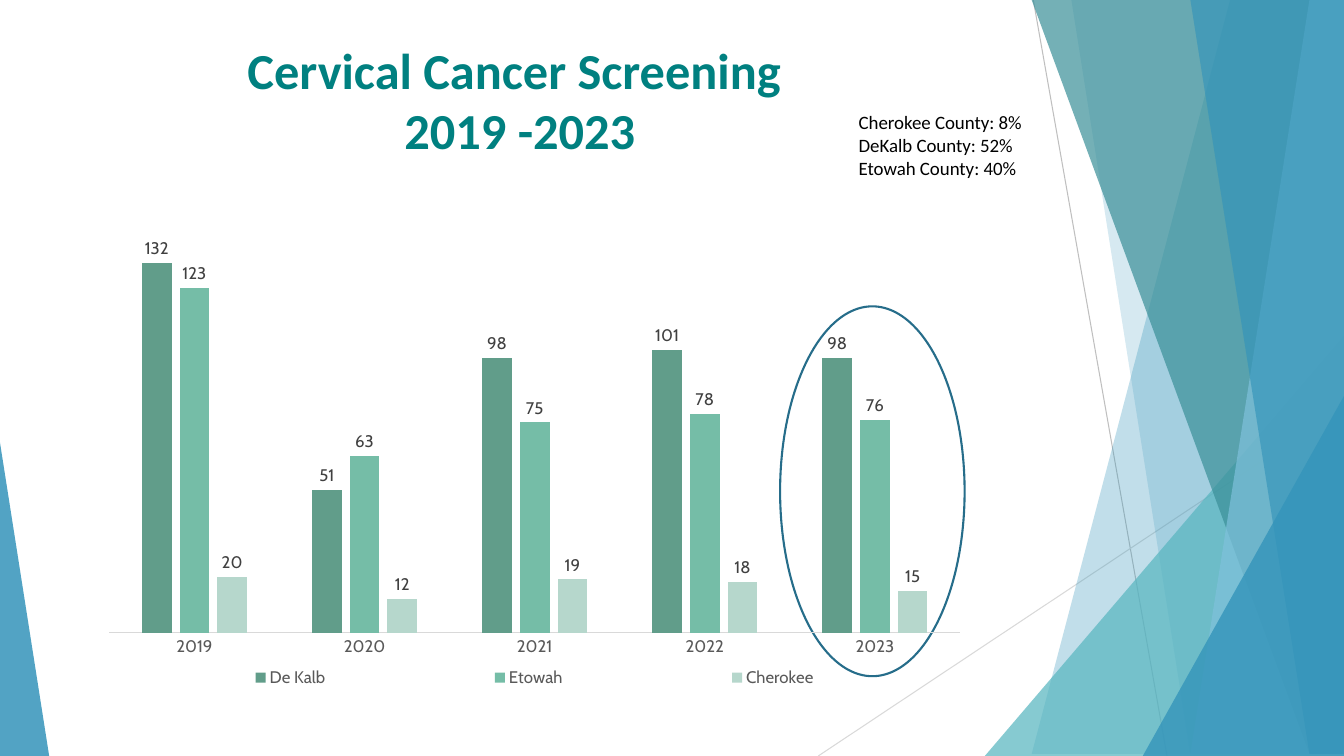
from lxml import etree
from pptx import Presentation
from pptx.chart.data import CategoryChartData
from pptx.dml.color import RGBColor
from pptx.enum.chart import XL_CHART_TYPE, XL_LABEL_POSITION, XL_LEGEND_POSITION, XL_TICK_MARK
from pptx.enum.shapes import MSO_CONNECTOR, MSO_SHAPE
from pptx.enum.text import MSO_ANCHOR, PP_ALIGN
from pptx.oxml import parse_xml
from pptx.oxml.ns import nsdecls, qn
from pptx.util import Cm, Pt

STRAIGHT = MSO_CONNECTOR.STRAIGHT
TRIANGLE = MSO_SHAPE.RIGHT_TRIANGLE.ISOSCELES_TRIANGLE
OVAL = MSO_SHAPE.OVAL
COLUMNS = XL_CHART_TYPE.COLUMN_CLUSTERED
OUTSIDE = XL_LABEL_POSITION.OUTSIDE_END
BOTTOM = XL_LEGEND_POSITION.BOTTOM
NO_TICK = XL_TICK_MARK.NONE

COLORS = {
    "blue": "3494BA", "aqua": "58B6C0", "teal": "3A8F98", "sky": "7FC1DB",
    "title": "008080", "oval": "266D8A", "black": "000000",
    "grey": "BFBFBF", "pale": "D9D9D9", "axis text": "595959", "label": "404040",
    "De Kalb": "619D8A", "Etowah": "75BDA7", "Cherokee": "B6D7CC",
}
RGB = {name: RGBColor.from_string(value) for name, value in COLORS.items()}
W, H, TOP = 33.87, 19.05, -0.02


def fill_facet(sp, color, alpha):
    """Give a background facet a see-through fill and no outline; alpha is in percent."""
    sp.shadow.inherit = False
    sp.fill.solid()
    sp.fill.fore_color.rgb = RGB[color]
    clr = sp.fill._xPr.find(qn("a:solidFill"))[0]
    etree.SubElement(clr, qn("a:alpha"), val=str(alpha * 1000))
    sp.line.fill.background()


def set_font(font, name, size, color):
    font.name, font.size = name, Pt(size)
    font.color.rgb = RGB[color]


prs = Presentation()
prs.slide_width, prs.slide_height = Cm(W), Cm(H)
s = prs.slides.add_slide(prs.slide_layouts[6])

# Background lines
for x1, y1, x2, y2, color in [(26.04, 0, 29.41, H, "grey"), (W, 10.24, 20.62, H, "pale")]:
    line = s.shapes.add_connector(STRAIGHT, Cm(x1), Cm(y1), Cm(x2), Cm(y2))
    line.line.color.rgb = RGB[color]
    line.line.width = Pt(0.75)
    etree.SubElement(line._element.spPr, qn("a:effectLst"))

# Background facets: bands run from the top edge to the bottom along the right side
facets = [
    ("band", 31.19, 25.5, "blue", 30),
    ("band", 26.67, 30.05, "blue", 20),
    ("triangle", 24.82, 8.46, 9.05, 1, "aqua", 72),
    ("band", 25.93, 32.79, "teal", 70),
    ("band", 33.1, 30.28, "sky", 70),
    ("band", 30.38, 33.48, "blue", 65),
    ("triangle", 28.8, 9.98, 5.07, 1, "blue", 80),
    ("triangle", 0, 11.15, 1.24, 0, "blue", 85),
]
for kind, *geometry, color, alpha in facets:
    if kind == "band":
        top_x, bottom_x = geometry
        fb = s.shapes.build_freeform(top_x, TOP, scale=Cm(1))
        fb.add_line_segments([(W, TOP), (W, H), (bottom_x, H)], close=True)
        sp = fb.convert_to_shape()
    else:
        x, y, width, apex = geometry
        sp = s.shapes.add_shape(TRIANGLE, Cm(x), Cm(y), Cm(width), Cm(H - y))
        sp.adjustments[0] = apex
    fill_facet(sp, color, alpha)

# Title
tf = s.shapes.add_textbox(Cm(0), Cm(0.76), Cm(26.21), Cm(3.48)).text_frame
tf.word_wrap = True
tf.vertical_anchor = MSO_ANCHOR.MIDDLE
p = tf.paragraphs[0]
p.alignment = PP_ALIGN.CENTER
p.add_run().text = "Cervical Cancer Screening "
p.add_line_break()
p.add_run().text = "2019 -2023"
set_font(p.font, "Calibri", 36, "title")
p.font.bold = True

# Oval around the latest year
oval = s.shapes.add_shape(OVAL, Cm(19.66), Cm(7.72), Cm(4.65), Cm(9.32))
oval.shadow.inherit = False
oval.fill.background()
oval.line.color.rgb = RGB["oval"]
oval.line.width = Pt(1.5)

# County shares
tf = s.shapes.add_textbox(Cm(21.39), Cm(2.67), Cm(5.87), Cm(1.98)).text_frame
tf.word_wrap = True
tf.text = "Cherokee County: 8%\nDeKalb County: 52%\nEtowah County: 40%"
for p in tf.paragraphs:
    set_font(p.font, "Calibri", 13.5, "black")

# Screenings chart
data = CategoryChartData()
data.categories = ["2019", "2020", "2021", "2022", "2023"]
data.add_series("De Kalb", [132, 51, 98, 101, 98])
data.add_series("Etowah", [123, 63, 75, 78, 76])
data.add_series("Cherokee", [20, 12, 19, 18, 15])
chart = s.shapes.add_chart(COLUMNS, Cm(2.31), Cm(5.82), Cm(22.33), Cm(11.91), data).chart
set_font(chart.font, "Cabin", 10, "black")
chart.has_title = False

axis = chart.category_axis
axis.major_tick_mark = axis.minor_tick_mark = NO_TICK
axis.format.line.color.rgb = RGB["pale"]
axis.format.line.width = Pt(0.75)
set_font(axis.tick_labels.font, "Cabin", 12, "axis text")
axis = chart.value_axis
axis.visible = False
axis.has_major_gridlines = False
axis.minimum_scale, axis.maximum_scale = 0, 140

plot = chart.plots[0]
plot.gap_width, plot.overlap = 219, -27
plot.vary_by_categories = False
for series in plot.series:
    series.format.fill.solid()
    series.format.fill.fore_color.rgb = RGB[series.name]
    labels = series.data_labels
    labels.show_value = True
    labels.position = OUTSIDE
    set_font(labels.font, "Cabin", 12, "label")

chart.has_legend = True
legend = chart.legend
legend.position = BOTTOM
legend.include_in_layout = False
set_font(legend.font, "Cabin", 12, "axis text")

# Fixed places of plot and legend, as shares of the chart
plot_area = chart._chartSpace.chart.plotArea
for parent, after, target, box in [
    (plot_area, None, '<c:layoutTarget val="inner"/>', (0.02, 0.02, 0.96, 0.83)),
    (legend._element, "c:legendPos", "", (0, 0.9, 1, 0.09)),
]:
    for old in parent.findall(qn("c:layout")):
        parent.remove(old)
    modes = '<c:xMode val="edge"/><c:yMode val="edge"/>'
    sizes = "".join(f'<c:{key} val="{value}"/>' for key, value in zip("xywh", box))
    layout = parse_xml(f'<c:layout {nsdecls("c")}><c:manualLayout>{target}{modes}{sizes}'
                       "</c:manualLayout></c:layout>")
    if after:
        parent.find(qn(after)).addnext(layout)
    else:
        parent.insert(0, layout)

prs.save("out.pptx")
